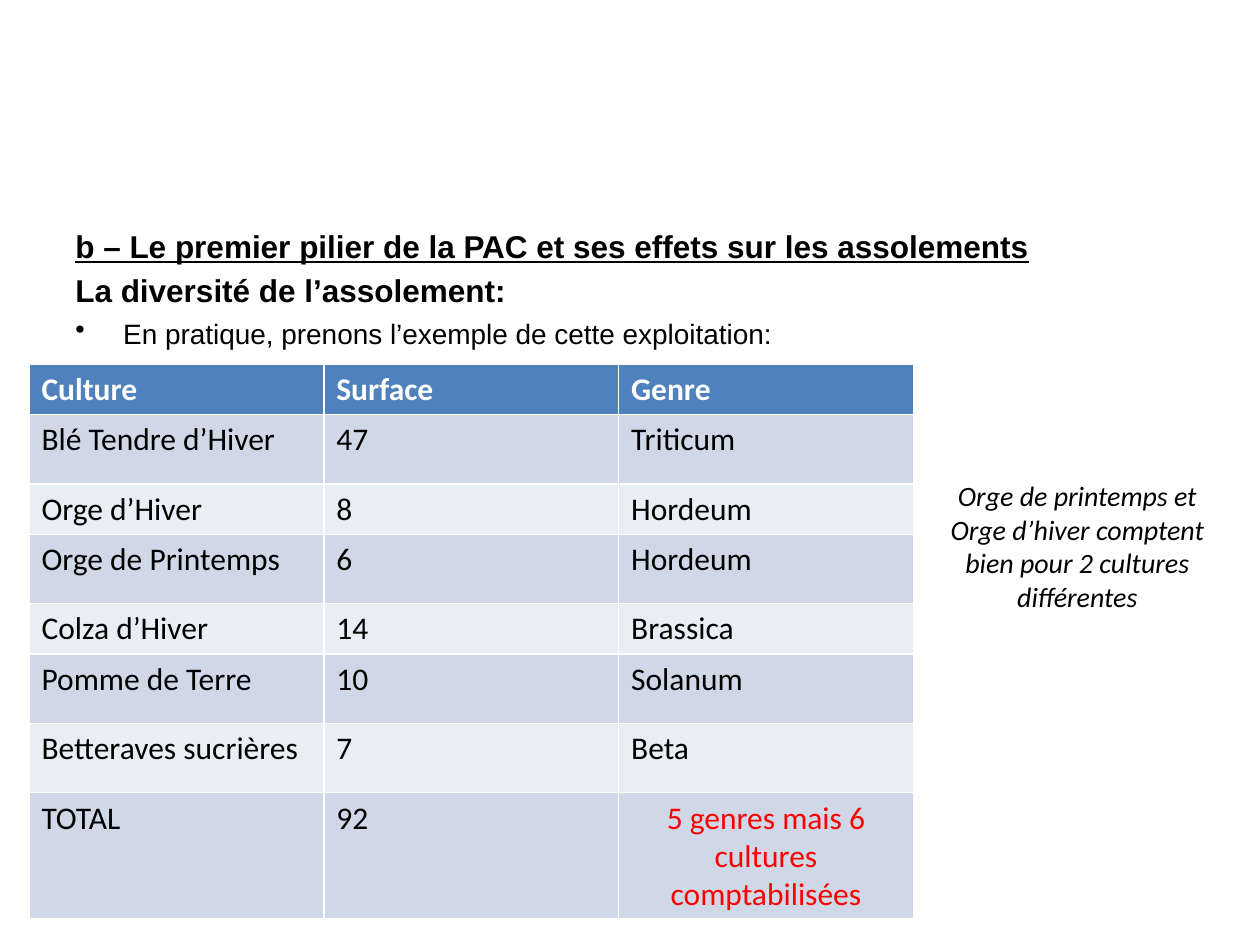
"""Build the slide on crop diversity under the first CAP pillar."""
from pptx import Presentation
from pptx.dml.color import RGBColor
from pptx.enum import text as t
from pptx.oxml import parse_xml
from pptx.oxml import ns
from pptx.util import Inches, Pt

INTRO = [
    ("b – Le premier pilier de la PAC et ses effets sur les assolements",
     dict(size=Pt(18), bold=True, underline=True), False),
    ("La diversité de l’assolement:", dict(size=Pt(18), bold=True), False),
    ("En pratique, prenons l’exemple de cette exploitation:",
     dict(size=Pt(16)), True),
]
CROPS = [
    ("Culture", "Surface", "Genre"),
    ("Blé Tendre d’Hiver", "47", "Triticum"),
    ("Orge d’Hiver", "8", "Hordeum"),
    ("Orge de Printemps", "6", "Hordeum"),
    ("Colza d’Hiver", "14", "Brassica"),
    ("Pomme de Terre", "10", "Solanum"),
    ("Betteraves sucrières", "7", "Beta"),
    ("TOTAL", "92", "5 genres mais 6 cultures comptabilisées"),
]
HIGHS = [0.4, 0.55, 0.4, 0.55, 0.4, 0.55, 0.55, 1]
WIDE = 2.34
NOTE = ("Orge de printemps et Orge d’hiver comptent bien "
        "pour 2 cultures différentes")
HEAD, BANDS = "4F81BD", ("E9EDF4", "D0D8E8")
BLACK, WHITE, RED = "000000", "FFFFFF", "FF0000"


def tint(form, code):
    form.rgb = RGBColor.from_string(code)


def write(para, words, color, **style):
    run = para.add_run()
    run.text = words
    for key, val in style.items():
        setattr(run.font, key, val)
    tint(run.font.color, color)


def add_box(slide, *place):
    frame = slide.shapes.add_textbox(*map(Inches, place)).text_frame
    frame.word_wrap = True
    return frame


def add_intro(slide):
    frame = add_box(slide, 0.5, 1.75, 9, 4.95)
    for i, (words, style, dot) in enumerate(INTRO):
        para = frame.add_paragraph() if i else frame.paragraphs[0]
        para.space_before = Pt(4)
        write(para, words, BLACK, name="Arial", **style)
        props = para._p.get_or_add_pPr()
        props.set("marL", str(Inches(0.38)))
        props.set("indent", str(-Inches(0.38)))
        mark = 'buChar char="•"' if dot else "buNone"
        props.append(parse_xml(f"<a:{mark} {ns.nsdecls('a')}/>"))


def add_crops(slide):
    place = map(Inches, (0.23, 2.89, 3 * WIDE, sum(HIGHS)))
    grid = slide.shapes.add_table(len(CROPS), 3, *place).table
    for col in grid.columns:
        col.width = Inches(WIDE)
    for r, (row, high) in enumerate(zip(CROPS, HIGHS)):
        grid.rows[r].height = Inches(high)
        for c, words in enumerate(row):
            cell = grid.cell(r, c)
            cell.fill.solid()
            tint(cell.fill.fore_color, BANDS[r % 2] if r else HEAD)
            para = cell.text_frame.paragraphs[0]
            last = (r, c) == (len(CROPS) - 1, 2)
            if last:
                para.alignment = t.PP_ALIGN.CENTER
            color = RED if last else BLACK if r else WHITE
            write(para, words, color, name="Calibri", size=Pt(18), bold=not r)


def add_note(slide):
    frame = add_box(slide, 7.34, 3.75, 2.42, 1.18)
    frame.auto_size = t.MSO_AUTO_SIZE.SHAPE_TO_FIT_TEXT
    para = frame.paragraphs[0]
    para.alignment = t.PP_ALIGN.CENTER
    write(para, NOTE, BLACK, name="Calibri", size=Pt(16), italic=True)


def main():
    deck = Presentation()
    deck.slide_width, deck.slide_height = Inches(10), Inches(7.5)
    slide = deck.slides.add_slide(deck.slide_layouts[6])
    for add in (add_intro, add_crops, add_note):
        add(slide)
    deck.save("out.pptx")


if __name__ == "__main__":
    main()
